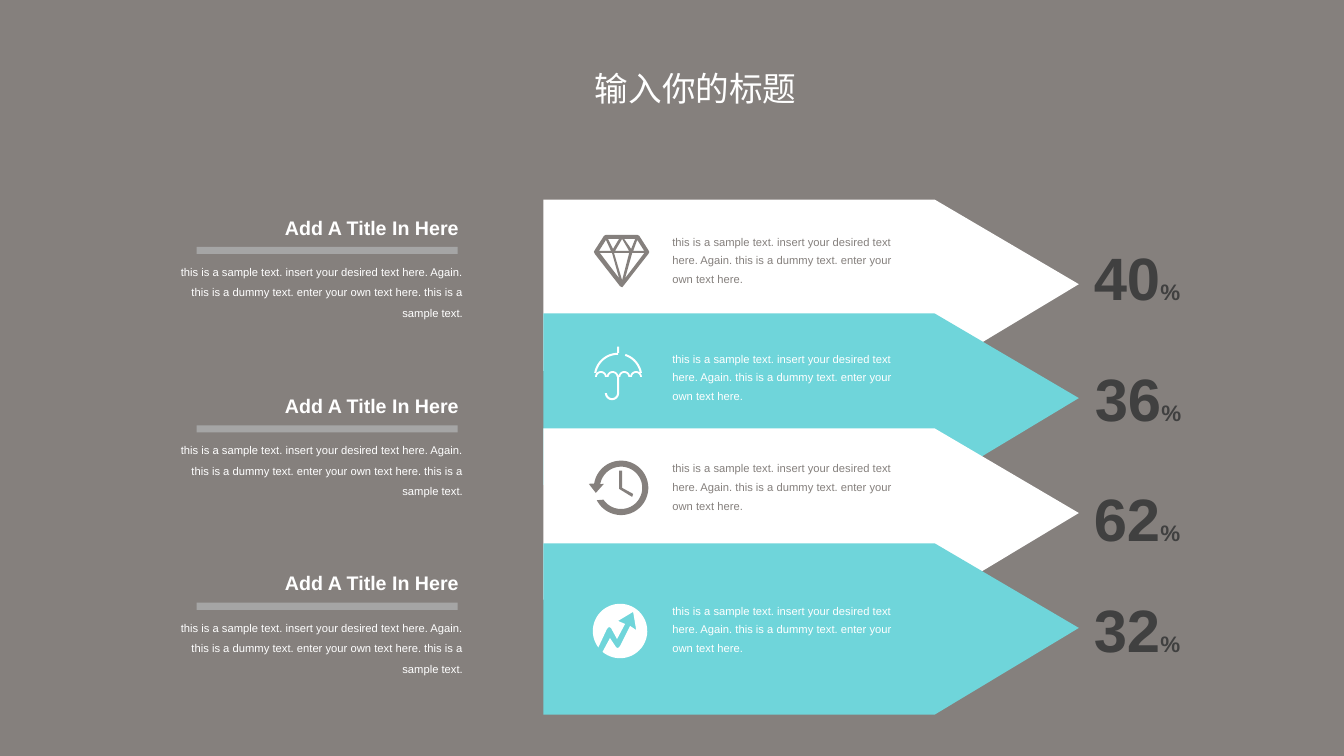
import math

import pptx
import pptx.dml.color
import pptx.enum.text
import pptx.oxml.ns
import pptx.util
from lxml import etree

Inches = pptx.util.Inches
Pt = pptx.util.Pt
RGB = pptx.dml.color.RGBColor
Align = pptx.enum.text.PP_ALIGN

GRAY = RGB(0x85, 0x80, 0x7D)
WHITE = RGB(0xFF, 0xFF, 0xFF)
TEAL = RGB(0x6F, 0xD5, 0xDA)
SILVER = RGB(0xA5, 0xA5, 0xA5)
DARK = RGB(0x40, 0x40, 0x40)

HEAD = "Add A Title In Here"
SHORT = ("this is a sample text. insert your desired text here. Again. "
         "this is a dummy text. enter your own text here.")
LONG = SHORT + " this is a sample text."

# Arrow top, arrow colour, text colour, text top, number, number left and top
ROWS = [
    (1.98, WHITE, GRAY, 2.23, "40", 10.75, 2.34),
    (3.11, TEAL, WHITE, 3.39, "36", 10.76, 3.54),
    (4.25, WHITE, GRAY, 4.48, "62", 10.75, 4.73),
    (5.39, TEAL, WHITE, 5.89, "32", 10.75, 5.83),
]
NOTES = [2.10, 3.87, 5.63]


def paint(shape, color):
    shape.fill.solid()
    shape.fill.fore_color.rgb = color
    shape.line.fill.background()
    shape.shadow.inherit = False


def add_outline(shapes, color, *loops):
    """Draw one filled shape from closed loops of points in inches."""
    loops = [[(Inches(x), Inches(y)) for x, y in loop] for loop in loops]
    pen = shapes.build_freeform(*loops[0][0])
    pen.add_line_segments(loops[0][1:])
    for loop in loops[1:]:
        pen.move_to(*loop[0])
        pen.add_line_segments(loop[1:])
    paint(pen.convert_to_shape(), color)


def arc(x, y, radius, start, end):
    """Points along an arc; angles in degrees, clockwise from the right."""
    count = max(8, abs(end - start) // 6)
    angles = [math.radians(start + (end - start) * i / count)
              for i in range(count + 1)]
    return [(x + radius * math.cos(a), y + radius * math.sin(a))
            for a in angles]


def band(x, y, outer, inner, start, end):
    return arc(x, y, outer, start, end) + arc(x, y, inner, end, start)


def style(para, color, size=None, bold=False):
    font = para.font
    font.name = "Arial"
    font.bold = bold
    font.color.rgb = color
    if size:
        font.size = Pt(size)


def add_text(shapes, box, text, color, size, pitch, align=Align.LEFT,
             bold=False):
    frame = shapes.add_textbox(*map(Inches, box)).text_frame
    frame.word_wrap = True
    frame.auto_size = pptx.enum.text.MSO_AUTO_SIZE.SHAPE_TO_FIT_TEXT
    para = frame.paragraphs[0]
    para.text = text
    para.alignment = align
    para.line_spacing = Pt(pitch)
    style(para, color, size, bold)


def add_note(slide, top):
    shapes = slide.shapes.add_group_shape().shapes
    add_text(shapes, (2.16, top, 2.49, 0.33), HEAD, WHITE, 14, 16,
             Align.RIGHT, True)
    add_text(shapes, (1.67, top + 0.41, 3.02, 0.73), LONG, WHITE, 8, 14.7,
             Align.RIGHT)
    bar = shapes.add_shape(pptx.enum.shapes.MSO_SHAPE.RECTANGLE, Inches(1.95),
                           Inches(top + 0.35), Inches(2.59), Inches(0.07))
    paint(bar, SILVER)


def add_arrow(shapes, top, color):
    add_outline(shapes, color, [
        (5.39, top), (9.27, top), (10.7, top + 0.84),
        (9.27, top + 1.7), (5.39, top + 1.7)])


def add_number(shapes, left, top, value):
    frame = shapes.add_textbox(Inches(left), Inches(top), Inches(1.07),
                               Inches(0.82)).text_frame
    frame.word_wrap = False
    frame.auto_size = pptx.enum.text.MSO_AUTO_SIZE.SHAPE_TO_FIT_TEXT
    para = frame.paragraphs[0]
    style(para, DARK, bold=True)
    for text, size in ((value, 42.7), ("%", 16)):
        run = para.add_run()
        run.text = text
        run.font.size = Pt(size)


def add_title(slide, text):
    title = slide.shapes.title
    title.left, title.top = Inches(5.58), Inches(0.62)
    title.width, title.height = Inches(2.64), Inches(0.5)
    title.text = text
    para = title.text_frame.paragraphs[0]
    para.alignment = Align.CENTER
    style(para, WHITE, 24)
    para.font.name = "Noto Sans CJK SC"
    # East Asian typeface
    props = para.runs[0].font._element
    face = etree.SubElement(props, pptx.oxml.ns.qn("a:ea"))
    face.set("typeface", "Noto Sans CJK SC")


def add_gem(shapes, color):
    add_outline(
        shapes, color,
        [(5.89, 2.5), (5.9, 2.48), (5.99, 2.34), (6.01, 2.33), (6.32, 2.33),
         (6.34, 2.34), (6.43, 2.48), (6.44, 2.5), (6.43, 2.52), (6.18, 2.84),
         (6.17, 2.85), (6.15, 2.84), (5.9, 2.52)],
        # Facets
        [(6.24, 2.51), (6.17, 2.78), (6.09, 2.51)],
        [(6.1, 2.49), (6.17, 2.37), (6.24, 2.49)],
        [(6.19, 2.37), (6.3, 2.37), (6.26, 2.47)],
        [(6.08, 2.47), (6.03, 2.37), (6.14, 2.37)],
        [(6.14, 2.76), (5.95, 2.51), (6.07, 2.51)],
        [(6.27, 2.51), (6.39, 2.51), (6.2, 2.76)],
        [(6.39, 2.49), (6.28, 2.49), (6.32, 2.38)],
        [(6.01, 2.38), (6.06, 2.49), (5.94, 2.49)])


def add_brolly(shapes, color):
    pitch = 0.116
    waves = [band(5.96 + pitch * i, 3.74, pitch / 2, 0.04, 180, 360)
             for i in range(4)]
    handle = ([(6.12, 3.74), (6.14, 3.74)] + arc(6.07, 3.9, 0.07, 0, 180)
              + arc(6.07, 3.9, 0.05, 180, 0))
    add_outline(
        shapes, color,
        band(6.13, 3.74, 0.24, 0.22, 190, 270),
        band(6.13, 3.74, 0.24, 0.22, 288, 350),
        [(6.12, 3.44), (6.14, 3.44), (6.14, 3.5), (6.12, 3.5)],
        handle, *waves)


def add_clock(shapes, color):
    ring = (arc(6.16, 4.84, 0.27, 189, 513) + arc(6.16, 4.84, 0.21, 506, 190)
            + [(5.99, 4.8), (5.91, 4.89), (5.84, 4.8)])
    hands = [(6.14, 4.67), (6.17, 4.67), (6.17, 4.84), (6.28, 4.9),
             (6.27, 4.93), (6.14, 4.85)]
    add_outline(shapes, color, ring, hands)


def add_growth(shapes, color):
    trend = [(6.05, 6.33), (6.11, 6.42), (6.13, 6.43), (6.15, 6.41),
             (6.25, 6.21), (6.31, 6.25), (6.28, 6.07), (6.13, 6.16),
             (6.2, 6.19), (6.12, 6.34), (6.06, 6.23), (6.04, 6.22),
             (6.02, 6.24)]
    add_outline(shapes, color, arc(6.15, 6.26, 0.27, 143, 490) + trend)


def main():
    deck = pptx.Presentation()
    deck.slide_width, deck.slide_height = Inches(13.33), Inches(7.5)
    slide = deck.slides.add_slide(deck.slide_layouts[5])
    shapes = slide.shapes

    # Backdrop and title
    slide.background.fill.solid()
    slide.background.fill.fore_color.rgb = GRAY
    add_title(slide, "输入你的标题")

    # Overlapping arrows
    for top, color, *_ in ROWS:
        add_arrow(shapes, top, color)

    # Notes on the left
    for top in NOTES:
        add_note(slide, top)

    # Icons, texts and numbers
    icons = (add_gem, add_brolly, add_clock, add_growth)
    for icon, (_, _, ink, top, value, left, high) in zip(icons, ROWS):
        icon(shapes, ink)
        add_text(shapes, (6.57, top, 2.51, 0.65), SHORT, ink, 8, 13.3)
        add_number(shapes, left, high, value)

    deck.save("out.pptx")


if __name__ == "__main__":
    main()
